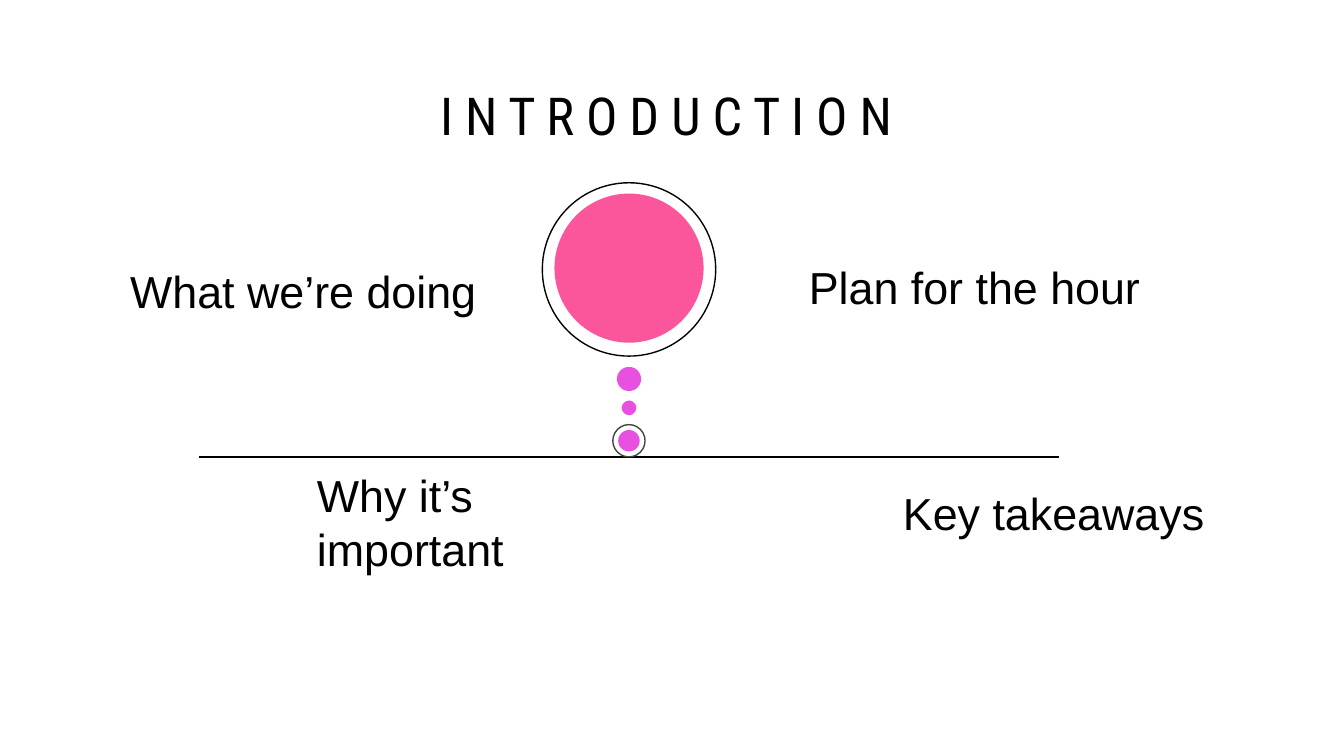
from lxml.etree import SubElement
from pptx import Presentation
from pptx.dml.color import RGBColor
from pptx.enum.shapes import MSO_CONNECTOR, MSO_SHAPE
from pptx.enum.text import MSO_ANCHOR, PP_ALIGN
from pptx.oxml.ns import qn
from pptx.util import Inches, Pt

BLACK = RGBColor(0x00, 0x00, 0x00)
WHITE = RGBColor(0xFF, 0xFF, 0xFF)
GRAY = RGBColor(0x43, 0x43, 0x43)
PINK = RGBColor(0xFB, 0x56, 0x9C)
MAGENTA = RGBColor(0xE8, 0x50, 0xE0)

COLUMNS, ROWS = 100, 56.25
CELL = Inches(0.1)


def cells(*counts):
    return [round(count * CELL) for count in counts]


class SlideBuilder:
    """Draws on one slide; all lengths are counted in grid cells."""

    body_font, title_font = "Arial", "Roboto Condensed"

    def __init__(self, slide):
        self.slide = slide

    def text(self, words, left, top, width, height, size=24, font=body_font,
             align=PP_ALIGN.LEFT, anchor=MSO_ANCHOR.TOP):
        box = self.slide.shapes.add_textbox(*cells(left, top, width, height))
        frame = box.text_frame
        frame.word_wrap = True
        frame.vertical_anchor = anchor
        frame.text = words
        paragraph = frame.paragraphs[0]
        paragraph.alignment = align
        style = paragraph.runs[0].font
        style.name, style.size = font, Pt(size)
        style.color.rgb = BLACK

    def title(self, words, left, top, width, height):
        self.text(words, left, top, width, height, 28, self.title_font,
                  PP_ALIGN.CENTER, MSO_ANCHOR.MIDDLE)

    def circle(self, center_x, center_y, diameter, fill=None, outline=None):
        radius = diameter / 2
        circle = self.slide.shapes.add_shape(
            MSO_SHAPE.OVAL,
            *cells(center_x - radius, center_y - radius, diameter, diameter))
        circle.shadow.inherit = False
        if fill is None:
            circle.fill.background()
        else:
            circle.fill.solid()
            circle.fill.fore_color.rgb = fill
        if outline is None:
            circle.line.fill.background()
        else:
            circle.line.color.rgb = outline
            circle.line.width = Pt(0.75)

    def horizontal_line(self, left, right, y):
        line = self.slide.shapes.add_connector(
            MSO_CONNECTOR.STRAIGHT, *cells(left, y, right, y))
        line.line.color.rgb = BLACK
        line.line.width = Pt(1.5)
        SubElement(line._element.spPr, qn("a:effectLst"))


def main():
    presentation = Presentation()
    presentation.slide_width, presentation.slide_height = cells(COLUMNS, ROWS)
    builder = SlideBuilder(
        presentation.slides.add_slide(presentation.slide_layouts[6]))

    builder.horizontal_line(14.8, 78.8, 34)
    builder.title("I N T R O D U C T I O N ", 7.8, 5.9, 84.4, 5.3)

    marker_x = 46.8
    for center_y, diameter, fill, outline in (
        (20.05, 12.9, None, BLACK),
        (28.2, 1.8, MAGENTA, None),
        (30.35, 1.1, MAGENTA, None),
        (32.8, 2.4, WHITE, GRAY),
        (32.8, 1.6, MAGENTA, None),
        (19.95, 11.1, PINK, None),
    ):
        builder.circle(marker_x, center_y, diameter, fill, outline)

    for topic, left, top, width, height in (
        ("What we’re doing", 8.7, 19.15, 37, 5),
        ("Why it’s important", 22.6, 34.3, 27, 9.1),
        ("Plan for the hour", 59.2, 18.8, 27, 5),
        ("Key takeaways", 66.2, 35.65, 27, 5),
    ):
        builder.text(topic, left, top, width, height)

    presentation.save("out.pptx")


if __name__ == "__main__":
    main()
